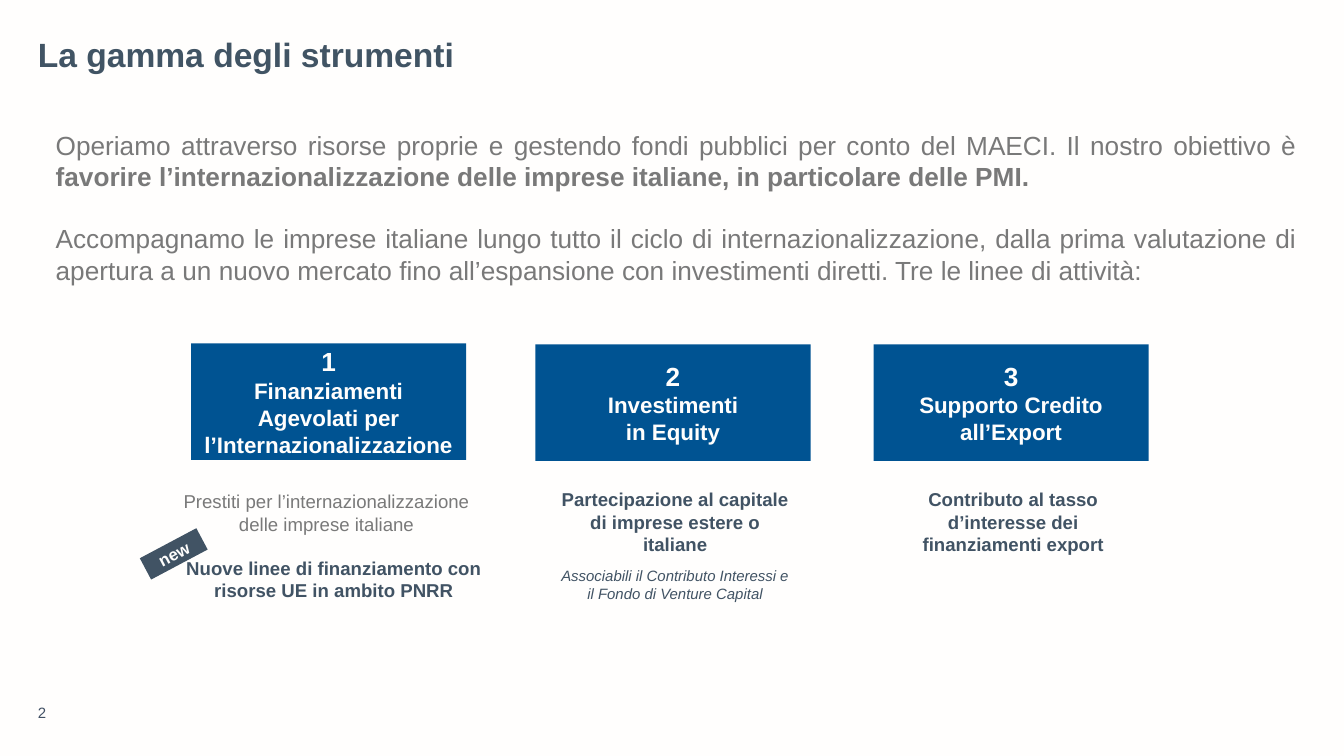
from dataclasses import dataclass

from pptx import Presentation
from pptx.dml.color import RGBColor
from pptx.enum import shapes, text
from pptx.util import Emu, Pt

PX = 9525  # EMU per px, 96 px to the inch


@dataclass(frozen=True)
class Theme:
    font: str = "Arial"
    paper: str = "FFFEFD"
    blue: str = "005392"
    slate: str = "415364"
    title_ink: str = "415464"
    number_ink: str = "415064"
    grey: str = "797979"
    title: float = 24
    lead: float = 18.7
    heading: float = 16
    body: float = 13.3
    badge: float = 12
    small: float = 10.7


T = Theme()
LEFT, CENTER, JUSTIFY = (
    text.PP_ALIGN.LEFT, text.PP_ALIGN.CENTER, text.PP_ALIGN.JUSTIFY)


def px(*values):
    return [Emu(v * PX) for v in values]


def set_frame(tf, anchor, insets):
    tf.word_wrap = True
    tf.vertical_anchor = anchor
    side, edge = px(*insets)
    tf.margin_left = tf.margin_right = side
    tf.margin_top = tf.margin_bottom = edge


def write(tf, index, content, size, color, align=LEFT, bold=False,
          italic=False, before=0):
    """Fill one paragraph; content is a string or (string, bold) pairs."""
    p = tf.paragraphs[0] if index == 0 else tf.add_paragraph()
    p.alignment = align
    if before:
        p.space_before = Pt(before)
    if isinstance(content, str):
        p.add_run().text = content
        p.font.bold = bold
    else:
        for words, strong in content:
            r = p.add_run()
            r.text = words
            r.font.bold = strong
    f = p.font
    f.name, f.size, f.italic = T.font, Pt(size), italic
    f.color.rgb = RGBColor.from_string(color)
    return p


def add_text(s, box, insets=(10, 5), anchor=text.MSO_ANCHOR.TOP):
    tf = s.shapes.add_textbox(*px(*box)).text_frame
    set_frame(tf, anchor, insets)
    return tf


def add_block(s, box, fill, insets=(0, 5)):
    sp = s.shapes.add_shape(shapes.MSO_SHAPE.RECTANGLE, *px(*box))
    sp.shadow.inherit = False
    sp.fill.solid()
    sp.fill.fore_color.rgb = RGBColor.from_string(fill)
    sp.line.fill.background()
    set_frame(sp.text_frame, text.MSO_ANCHOR.MIDDLE, insets)
    return sp


def add_activity(s, number, left, top, lines):
    tf = add_block(s, (left, top, 262, 111), T.blue).text_frame
    write(tf, 0, str(number), T.lead, T.paper, CENTER, bold=True)
    for i, line in enumerate(lines, 1):
        write(tf, i, line, T.heading, T.paper, CENTER, bold=True)


def add_caption(s, box, words, color=T.slate, bold=True, insets=(10, 5)):
    tf = add_text(s, box, insets)
    write(tf, 0, words, T.body, color, CENTER, bold=bold)
    return tf


def main():
    prs = Presentation()
    prs.slide_width, prs.slide_height = px(1280, 720)
    s = prs.slides.add_slide(prs.slide_layouts[6])
    s.background.fill.solid()
    s.background.fill.fore_color.rgb = RGBColor.from_string(T.paper)

    # Title and introduction
    tf = add_text(s, (36, 37, 902, 40), (0, 0))
    p = write(tf, 0, "La gamma degli strumenti", T.title, T.title_ink, bold=True)
    p.line_spacing = 0.9

    tf = add_text(s, (43, 118, 1202, 144))
    write(tf, 0, [
        ("Operiamo attraverso risorse proprie e gestendo fondi pubblici per "
         "conto del MAECI. Il nostro obiettivo è ", False),
        ("favorire l’internazionalizzazione delle imprese italiane, in "
         "particolare delle PMI.", True),
    ], T.lead, T.grey, JUSTIFY)
    write(tf, 1, "Accompagnamo le imprese italiane lungo tutto il ciclo di "
          "internazionalizzazione, dalla prima valutazione di apertura a un "
          "nuovo mercato fino all’espansione con investimenti diretti. Tre le "
          "linee di attività:", T.lead, T.grey, JUSTIFY, before=22)

    # Three lines of activity
    activities = [
        (182, 327, ["Finanziamenti", "Agevolati per l’Internazionalizzazione"]),
        (510, 328, ["Investimenti", "in Equity"]),
        (832, 328, ["Supporto Credito", "all’Export"]),
    ]
    for number, (left, top, lines) in enumerate(activities, 1):
        add_activity(s, number, left, top, lines)

    # Captions below the activities
    add_caption(s, (144, 460, 334, 95), "Prestiti per l’internazionalizzazione "
                "delle imprese italiane", T.grey, False, (12, 7))
    add_caption(s, (151, 523, 334, 91), "Nuove linee di finanziamento con "
                "risorse UE in ambito PNRR", insets=(12, 7))
    tf = add_caption(s, (523, 460, 240, 143), "Partecipazione al capitale di "
                     "imprese estere o italiane")
    write(tf, 1, "Associabili il Contributo Interessi e il Fondo di Venture "
          "Capital", T.small, T.slate, CENTER, italic=True, before=8)
    add_caption(s, (852, 460, 226, 108), "Contributo al tasso d’interesse dei "
                "finanziamenti export")

    # Badge and slide number
    badge = add_block(s, (135, 516, 61, 23), T.slate)
    badge.rotation = 332
    write(badge.text_frame, 0, "new", T.badge, T.paper, CENTER, bold=True)
    tf = add_text(s, (36, 661, 141, 26), (0, 0), text.MSO_ANCHOR.BOTTOM)
    write(tf, 0, "2", T.small, T.number_ink)

    prs.save("out.pptx")


if __name__ == "__main__":
    main()
